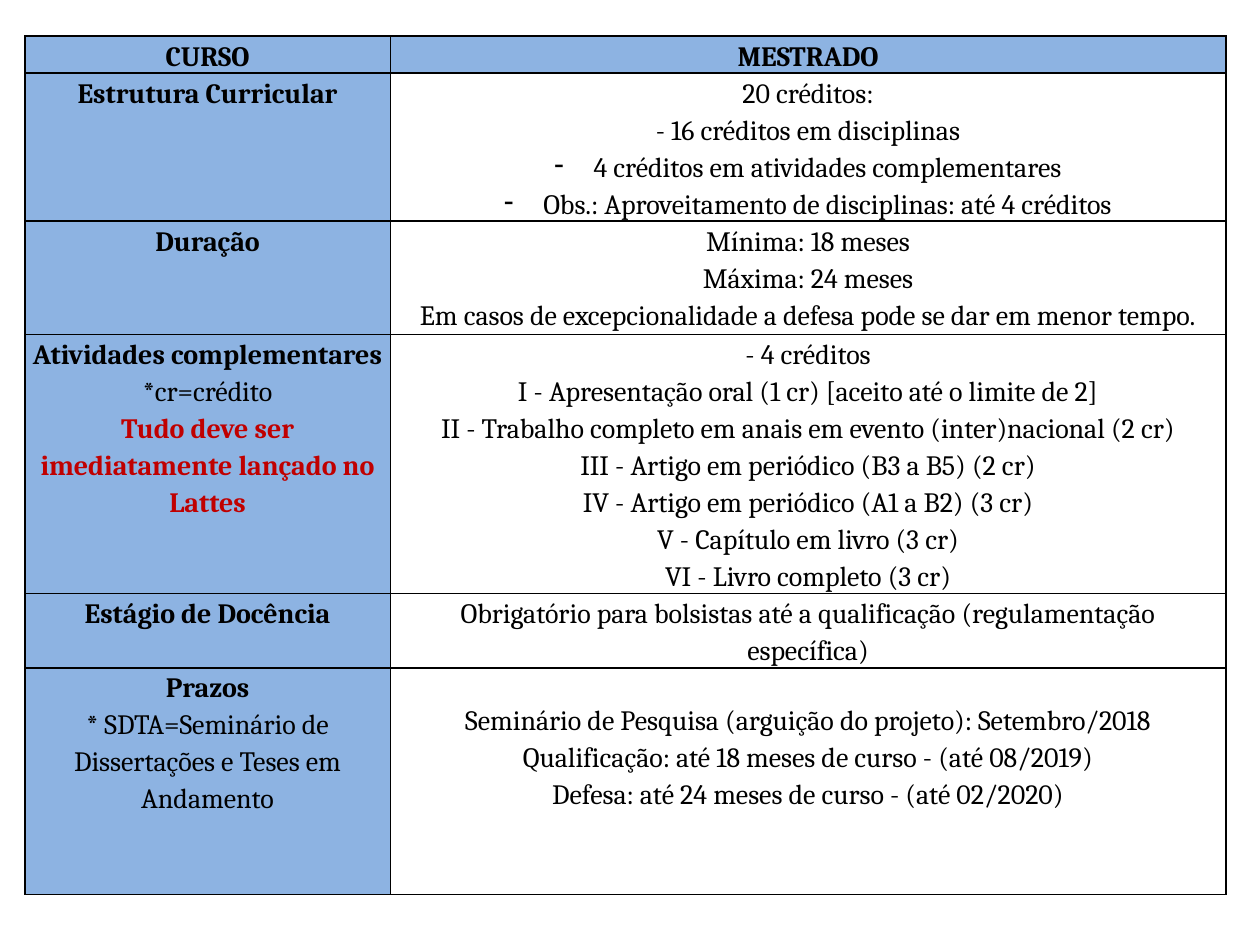
from dataclasses import dataclass

from pptx import Presentation
from pptx import util as u
from pptx.dml.color import RGBColor
from pptx.enum import text
from pptx.oxml import parse_xml
from pptx.oxml.ns import nsdecls


@dataclass(frozen=True)
class Theme:
    """Colours, type and line values."""
    face: str = "Cambria"
    size: int = 16
    ink: str = "000000"
    alert: str = "C00000"
    head: str = "8DB3E2"
    rule: float = 1
    lead: float = 1.15


T = Theme()
COLS = 7.37, 16.84
HIGH = 0.74, 2.98, 2.29, 5.13, 1.5, 4.57
BOLD, PLAIN, ALERT, DASH = "bold", "plain", "alert", "dash"


def plain(*lines):
    """Pair each line with the plain style."""
    return [(line, PLAIN) for line in lines]


ROWS = [
    ([("CURSO", BOLD)], [("MESTRADO", BOLD)]),
    ([("Estrutura Curricular", BOLD)],
     plain("20 créditos:", "- 16 créditos em disciplinas")
     + [("4 créditos em atividades complementares", DASH),
        ("Obs.: Aproveitamento de disciplinas: até 4 créditos", DASH)]),
    ([("Duração", BOLD)],
     plain("Mínima: 18 meses", "Máxima: 24 meses",
           "Em casos de excepcionalidade a defesa pode se dar em menor tempo.")),
    ([("Atividades complementares", BOLD), ("*cr=crédito", PLAIN),
      ("Tudo deve ser imediatamente lançado no Lattes", ALERT)],
     plain("- 4 créditos",
           "I - Apresentação oral (1 cr) [aceito até o limite de 2]",
           "II - Trabalho completo em anais em evento (inter)nacional (2 cr)",
           "III - Artigo em periódico (B3 a B5) (2 cr)",
           "IV - Artigo em periódico (A1 a B2) (3 cr)",
           "V - Capítulo em livro (3 cr)",
           "VI - Livro completo (3 cr)")),
    ([("Estágio de Docência", BOLD)],
     plain("Obrigatório para bolsistas até a qualificação "
           "(regulamentação específica)")),
    ([("Prazos", BOLD),
      ("* SDTA=Seminário de Dissertações e Teses em Andamento", PLAIN)],
     plain("Seminário de Pesquisa (arguição do projeto): Setembro/2018",
           "Qualificação: até 18 meses de curso - (até 08/2019)",
           "Defesa: até 24 meses de curso - (até 02/2020)")),
]


def assign(obj, vals):
    """Set attributes from a dict."""
    for key, val in vals.items():
        setattr(obj, key, val)


def border(cell):
    """Rule all four sides of a cell."""
    props = cell._tc.get_or_add_tcPr()
    for side in "LRTB":
        props.append(parse_xml(
            f'<a:ln{side} {nsdecls("a")} w="{u.Pt(T.rule)}"><a:solidFill>'
            f'<a:srgbClr val="{T.ink}"/></a:solidFill></a:ln{side}>'))


def dash(para):
    """Give a paragraph a hanging dash."""
    props = para._p.get_or_add_pPr()
    hang = u.Cm(0.79)
    props.set("marL", str(hang))
    props.set("indent", str(-hang))
    props.append(parse_xml(f'<a:buChar {nsdecls("a")} char="-"/>'))


def write(para, line, kind):
    """Write one styled line."""
    assign(para, {"alignment": text.PP_ALIGN.CENTER, "line_spacing": T.lead})
    if kind == DASH:
        dash(para)
    run = para.add_run()
    run.text = line
    assign(run.font, {"name": T.face, "size": u.Pt(T.size),
                      "bold": kind in (BOLD, ALERT)})
    tint = T.alert if kind == ALERT else T.ink
    run.font.color.rgb = RGBColor.from_string(tint)


def fill(cell, lines, shade, drop):
    """Format a cell and write its lines."""
    assign(cell, {"margin_left": u.Cm(0.13), "margin_right": u.Cm(0.13),
                  "margin_top": u.Cm(drop), "margin_bottom": 0,
                  "vertical_anchor": text.MSO_ANCHOR.TOP})
    border(cell)
    if shade:
        cell.fill.solid()
        cell.fill.fore_color.rgb = RGBColor.from_string(T.head)
    else:
        cell.fill.background()
    frame = cell.text_frame
    for i, (line, kind) in enumerate(lines):
        para = frame.add_paragraph() if i else frame.paragraphs[0]
        write(para, line, kind)


def grid(slide, left, top):
    """Place the course table at a corner."""
    box = [u.Cm(n) for n in (left, top, sum(COLS), sum(HIGH))]
    table = slide.shapes.add_table(len(ROWS), len(COLS), *box).table
    assign(table, {"first_row": False, "horz_banding": False})
    for col, wide in zip(table.columns, COLS):
        col.width = u.Cm(wide)
    for r, (row, tall) in enumerate(zip(ROWS, HIGH)):
        table.rows[r].height = u.Cm(tall)
        for c, lines in enumerate(row):
            last = r == len(ROWS) - 1 and c == 1
            fill(table.cell(r, c), lines, r == 0 or c == 0,
                 0.66 if last else 0)


def main():
    """Build and save the slide."""
    deck = Presentation()
    assign(deck, {"slide_width": u.Cm(25.4), "slide_height": u.Cm(19.05)})
    grid(deck.slides.add_slide(deck.slide_layouts[6]), 0.5, 0.73)
    deck.save("out.pptx")


if __name__ == "__main__":
    main()
